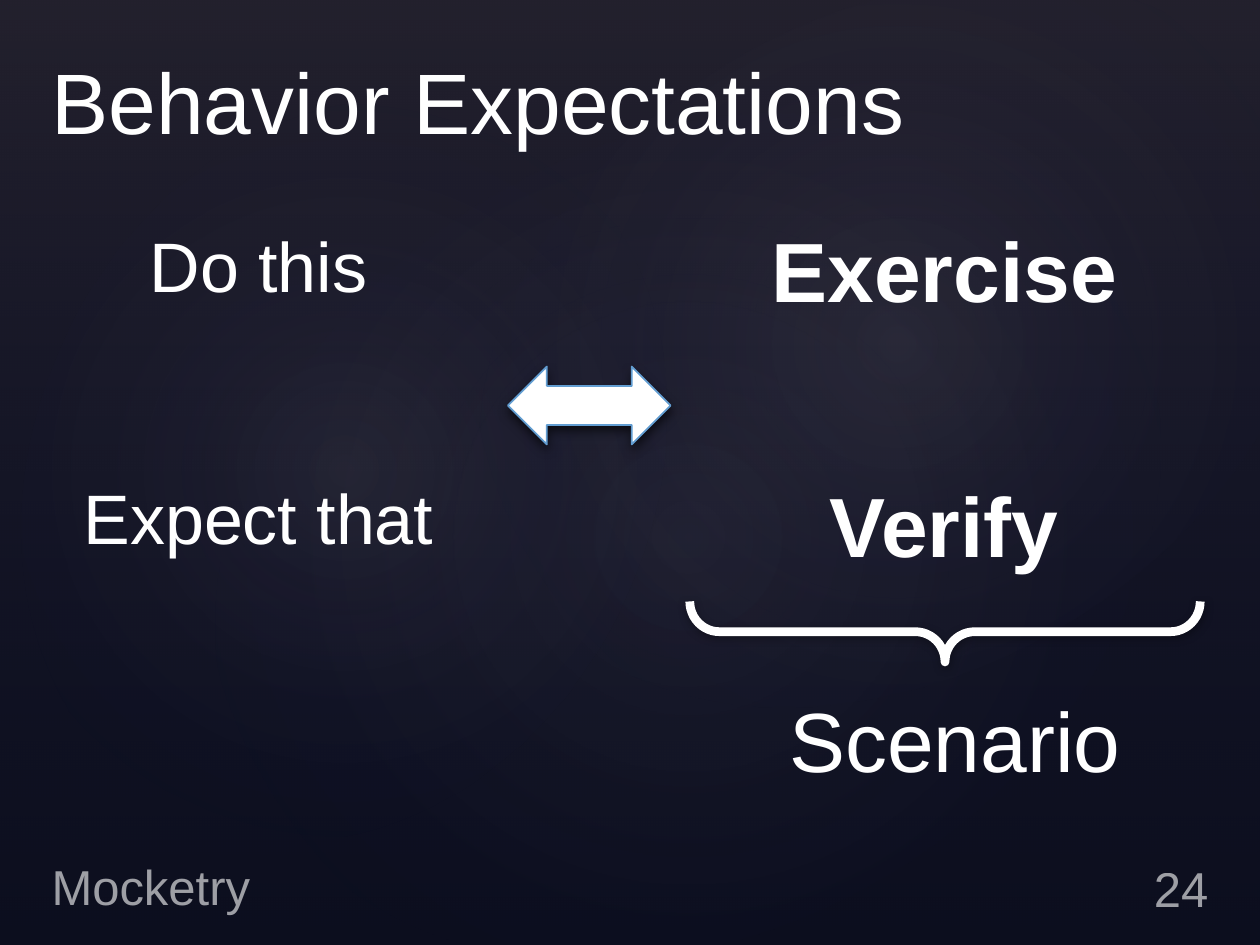
"""Build the Behavior Expectations slide of the Mocketry talk."""
from lxml.etree import SubElement
from pptx import Presentation
from pptx.dml.color import RGBColor
from pptx.enum.shapes import MSO_SHAPE as Shape
from pptx.enum.text import MSO_ANCHOR as Anchor, PP_ALIGN as Align
from pptx.oxml.ns import qn
from pptx.util import Cm, Pt

WHITE, NIGHT, NAVY, MAUVE = "FFFFFF", "0A0C19", "242852", "C4BCC6"
VEIL_STOPS = [(0, "504652", 36), (100, NAVY, 10)]
GLOWS = [
    ((3.81, 2.9, 20.12, 15.85), 328.7, 7),
    ((-0.76, 3.25, 15.39, 12.45), 294.3, 8),
    ((9.09, 0.33, 18.01, 13.21), 328.7, 8),
]
COLUMNS = [
    (["Do this", "Expect that"], (0.79, 3.18, 8.84, 8.89),
     dict(size=40, gap=96, insets=(0.25, 1.3, 0.25, 0.13))),
    (["Exercise", "Verify"], (13.89, 3.18, 10.29, 8.89),
     dict(size=48, gap=88.5, bold=True, insets=(0.25, 1.22, 0.25, 0.13))),
]


def rgb(value):
    return RGBColor.from_string(value)


def add_element(parent, tag, **attributes):
    return SubElement(parent, qn(tag), {key: str(val) for key, val in attributes.items()})


def add_color(parent, value, opacity):
    color = add_element(parent, "a:srgbClr", val=value)
    add_element(color, "a:alpha", val=opacity * 1000)


def add_figure(kind, box, fill=None, line=None, width=1, rotation=0, shadow=None):
    figure = slide.shapes.add_shape(kind, *map(Cm, box))
    figure.rotation = rotation
    if fill:
        figure.fill.solid()
        figure.fill.fore_color.rgb = rgb(fill)
    else:
        figure.fill.background()
    if line:
        figure.line.color.rgb = rgb(line)
        figure.line.width = Pt(width)
    else:
        figure.line.fill.background()
    figure.shadow.inherit = False
    if shadow:
        opacity, blur, distance = shadow
        effects = figure._element.spPr.find(qn("a:effectLst"))
        outer = add_element(effects, "a:outerShdw", blurRad=Pt(blur), dist=Pt(distance),
                            dir=5400000, rotWithShape=0)
        add_color(outer, "000000", opacity)
    return figure


def add_gradient(kind, box, stops, radial=False, rotation=0):
    figure = add_figure(kind, box, rotation=rotation)
    properties = figure._element.spPr
    blank = properties.find(qn("a:noFill"))
    gradient = add_element(properties, "a:gradFill", rotWithShape=1)
    properties.replace(blank, gradient)
    stop_list = add_element(gradient, "a:gsLst")
    for position, value, opacity in stops:
        add_color(add_element(stop_list, "a:gs", pos=position * 1000), value, opacity)
    if radial:
        focus = add_element(gradient, "a:path", path="circle")
        add_element(focus, "a:fillToRect", l=50000, t=50000, r=50000, b=50000)
    else:
        add_element(gradient, "a:lin", ang=5400000, scaled=0)


def add_text(lines, box, size=48, bold=False, align=Align.CENTER, anchor=Anchor.TOP,
             opacity=100, gap=0, insets=(0.25, 0.13, 0.25, 0.13)):
    frame = slide.shapes.add_textbox(*map(Cm, box)).text_frame
    frame.word_wrap = True
    frame.vertical_anchor = anchor
    (frame.margin_left, frame.margin_top,
     frame.margin_right, frame.margin_bottom) = map(Cm, insets)
    for index, line in enumerate(lines):
        paragraph = frame.add_paragraph() if index else frame.paragraphs[0]
        paragraph.alignment = align
        paragraph.space_before = Pt(gap if index else 0)
        run = paragraph.add_run()
        run.text = line
        run.font.name, run.font.size, run.font.bold = "Arial", Pt(size), bold
        run.font.color.rgb = rgb(WHITE)
        if opacity < 100:
            color = run._r.rPr.find(".//" + qn("a:srgbClr"))
            add_element(color, "a:alpha", val=opacity * 1000)


deck = Presentation()
deck.slide_width, deck.slide_height = Cm(25.4), Cm(19.05)
slide = deck.slides.add_slide(deck.slide_layouts[6])
slide.background.fill.solid()
slide.background.fill.fore_color.rgb = rgb(NIGHT)

add_gradient(Shape.RECTANGLE, (0, 0, 25.4, 19.05), VEIL_STOPS)
for box, rotation, opacity in GLOWS:
    add_gradient(Shape.OVAL, box, [(0, MAUVE, opacity), (58, NAVY, 0)],
                 radial=True, rotation=rotation)

add_text(["Behavior Expectations"], (0.79, 0.64, 23.85, 2.54), size=49,
         align=Align.LEFT, anchor=Anchor.BOTTOM)
for lines, box, style in COLUMNS:
    add_text(lines, box, **style)
add_text(["Scenario"], (13.89, 13.76, 10.72, 2.31))
add_text(["Mocketry"], (0.79, 17.15, 18.26, 1.42), size=28, align=Align.LEFT,
         anchor=Anchor.MIDDLE, opacity=60)
add_text(["24"], (19.05, 17.15, 5.56, 1.42), size=28, align=Align.RIGHT,
         anchor=Anchor.MIDDLE, opacity=60, insets=(0.25, 0.13, 0.25, 0.03))

add_figure(Shape.LEFT_RIGHT_ARROW, (10.24, 7.39, 3.28, 1.57), fill=WHITE,
           line="629DD1", shadow=(60, 6, 3))
brace = add_figure(Shape.RIGHT_BRACE, (18.44, 7.59, 1.22, 10.29), line=WHITE,
                   width=5, rotation=90, shadow=(32, 5, 1))
brace.adjustments[0], brace.adjustments[1] = 0.49, 0.5

deck.save("out.pptx")
